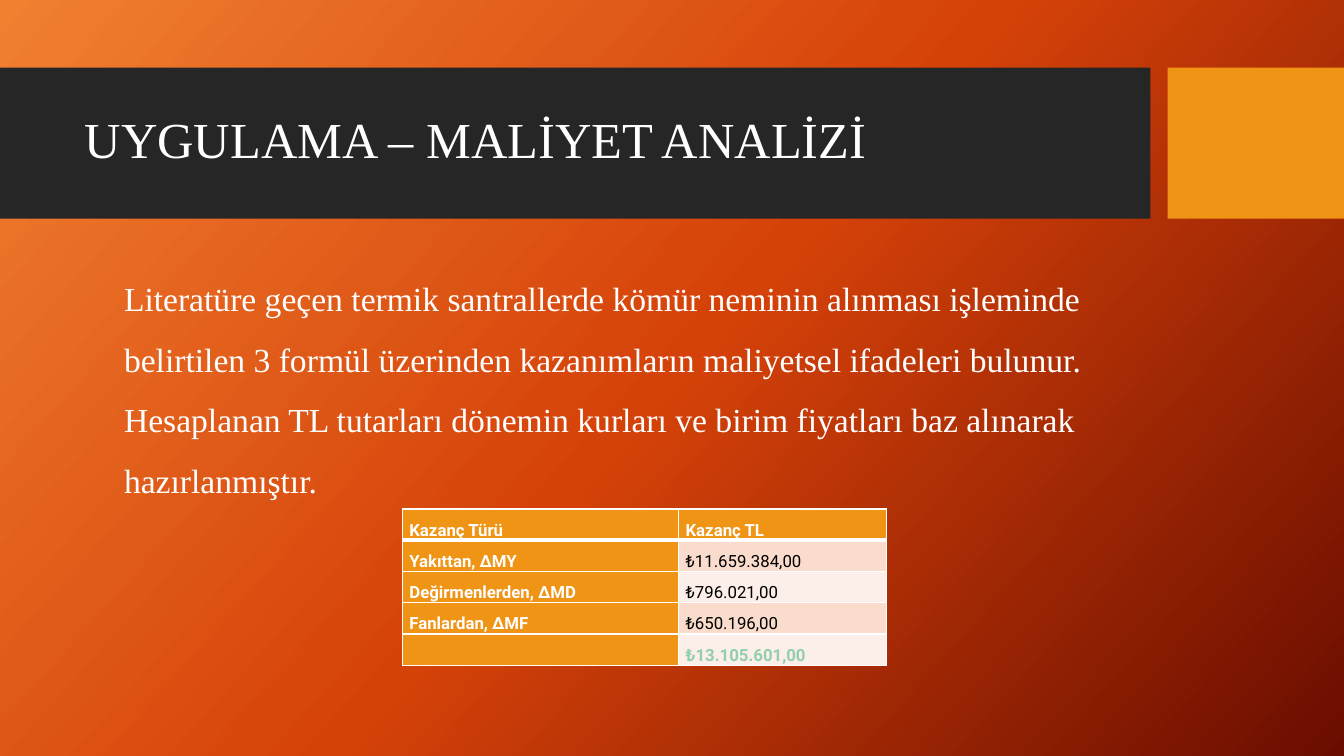
from copy import deepcopy

from lxml import etree
from pptx import Presentation
from pptx import util as u
from pptx.dml.color import RGBColor
from pptx.enum import shapes, text
from pptx.oxml import ns

WHITE, BLACK, DARK, ORANGE, GREEN = "FFFFFF", "000000", "262626", "F09415", "92D0AB"
BAND_TINTS = ["FCEEE8", "F9DCCC"]
BACKGROUND_STOPS = [(0, "F18031"), (0.5, "D54209"), (1, "6A0D00")]
GAINS = [
    ("Kazanç Türü", "Kazanç TL"),
    ("Yakıttan, ∆MY", "₺11.659.384,00"),
    ("Değirmenlerden, ∆MD", "₺796.021,00"),
    ("Fanlardan, ∆MF", "₺650.196,00"),
    ("", "₺13.105.601,00"),
]


def colour(value):
    return RGBColor.from_string(value)


def apply(target, values):
    for name, value in values.items():
        setattr(target, name, value)


class SlideBuilder:
    serif = "Times New Roman"
    sans = "Roboto"

    def __init__(self, deck):
        self.slide = deck.slides.add_slide(deck.slide_layouts[1])

    def background(self, stops, angle):
        fill = self.slide.background.fill
        fill.gradient()
        fill.gradient_angle = 360 - angle
        stop_list = self.slide.element.find(".//" + ns.qn("a:gsLst"))
        stop_list.insert(1, deepcopy(stop_list[0]))
        for stop, (position, value) in zip(fill.gradient_stops, stops):
            stop.position = position
            stop.color.rgb = colour(value)

    def band(self, order, left, width, value):
        box = self.slide.shapes.add_shape(
            shapes.MSO_SHAPE.RECTANGLE,
            u.Inches(left), u.Inches(0.67), u.Inches(width), u.Inches(1.5))
        box.shadow.inherit = False
        box.fill.solid()
        box.fill.fore_color.rgb = colour(value)
        box.line.fill.background()
        self.slide.shapes.element.insert(2 + order, box.element)

    def add_words(self, para, words, font, size, value, bold=False, spacing=1.0):
        apply(para, {"alignment": text.PP_ALIGN.LEFT, "line_spacing": spacing,
                     "space_before": u.Pt(0)})
        span = para.add_run()
        span.text = words
        apply(span.font, {"name": font, "size": u.Pt(size), "bold": bold})
        span.font.color.rgb = colour(value)

    def placeholder(self, index, place, words, size, spacing, anchor):
        box = self.slide.placeholders[index]
        apply(box, dict(zip(("left", "top", "width", "height"), map(u.Inches, place))))
        apply(box.text_frame, {"word_wrap": True, "vertical_anchor": anchor,
                               "auto_size": text.MSO_AUTO_SIZE.NONE})
        para = box.text_frame.paragraphs[0]
        properties = para._p.get_or_add_pPr()
        properties.set("marL", "0")
        properties.set("indent", "0")
        etree.SubElement(properties, ns.qn("a:buNone"))
        self.add_words(para, words, self.serif, size, WHITE, spacing=spacing)

    def border(self, cell, side, points):
        line = etree.SubElement(cell._tc.get_or_add_tcPr(), ns.qn("a:ln" + side),
                                w=str(u.Pt(points)))
        fill = etree.SubElement(line, ns.qn("a:solidFill"))
        etree.SubElement(fill, ns.qn("a:srgbClr"), val=WHITE)

    def cell(self, cell, words, fill, value, bold, top, bottom):
        apply(cell, {"margin_left": u.Inches(0.07), "margin_right": u.Inches(0.07),
                     "margin_top": 0, "margin_bottom": 0,
                     "vertical_anchor": text.MSO_ANCHOR.BOTTOM})
        for side, points in {"L": 1, "R": 1, "T": top, "B": bottom}.items():
            self.border(cell, side, points)
        cell.fill.solid()
        cell.fill.fore_color.rgb = colour(fill)
        if words:
            self.add_words(cell.text_frame.paragraphs[0], words, self.sans, 12, value,
                           bold, 1.07)

    def table(self, rows, left, top, widths, row_height):
        table = self.slide.shapes.add_table(
            len(rows), len(widths), u.Inches(left), u.Inches(top),
            u.Inches(sum(widths)), u.Inches(row_height * len(rows))).table
        for column, width in zip(table.columns, widths):
            column.width = u.Inches(width)
        last = len(rows) - 1
        for r, row in enumerate(rows):
            table.rows[r].height = u.Inches(row_height)
            for c, words in enumerate(row):
                label = r == 0 or c == 0
                fill = ORANGE if label else BAND_TINTS[r % 2]
                value = WHITE if label else GREEN if r == last else BLACK
                self.cell(table.cell(r, c), words, fill, value, label or r == last,
                          3 if r == 1 else 1, 3 if r == 0 else 1)


def main():
    deck = Presentation()
    deck.slide_width, deck.slide_height = u.Inches(13.33), u.Inches(7.5)
    page = SlideBuilder(deck)
    page.background(BACKGROUND_STOPS, 42)
    page.band(0, 0, 11.41, DARK)
    page.band(1, 11.58, 1.75, ORANGE)
    page.placeholder(0, (0.74, 0.82, 10.51, 1.18), "UYGULAMA – MALİYET ANALİZİ",
                     36, 0.9, text.MSO_ANCHOR.MIDDLE)
    page.placeholder(
        1, (1.13, 2.51, 10.51, 3.94),
        "Literatüre geçen termik santrallerde kömür neminin alınması işleminde "
        "belirtilen 3 formül üzerinden kazanımların maliyetsel ifadeleri bulunur. "
        "Hesaplanan TL tutarları dönemin kurları ve birim fiyatları baz alınarak "
        "hazırlanmıştır.", 24, 1.5, text.MSO_ANCHOR.TOP)
    page.table(GAINS, 3.99, 5.05, [2.74, 2.06], 0.31)
    deck.save("out.pptx")


if __name__ == "__main__":
    main()
